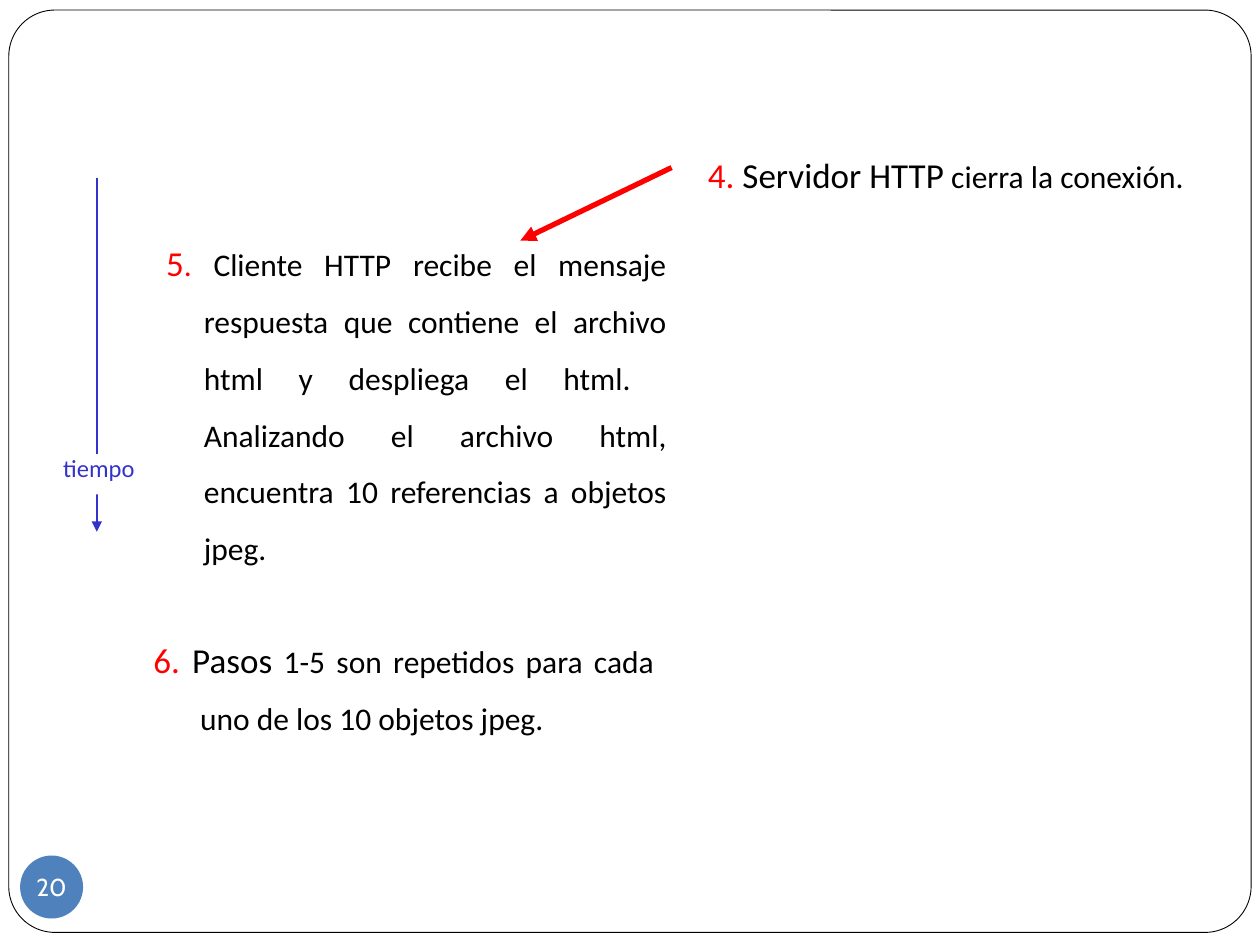
from pptx import Presentation
from pptx.dml.color import RGBColor
from pptx.enum.shapes import MSO_CONNECTOR, MSO_SHAPE
from pptx.enum.text import MSO_ANCHOR, PP_ALIGN
from pptx.oxml.ns import qn
from pptx.util import Inches, Pt
from lxml.etree import SubElement

COLUMNS, ROWS = 100, 75
WIDTH, HEIGHT = Inches(10), Inches(7.5)
RED, BLUE, BLACK, WHITE = "FF0000", "3333CC", "000000", "FFFFFF"


def color(value):
    return RGBColor.from_string(value)


def across(columns):
    return round(WIDTH * columns / COLUMNS)


def down(rows):
    return round(HEIGHT * rows / ROWS)


def place(box):
    left, top, width, height = box
    return across(left), down(top), across(width), down(height)


def add_span(para, text, size, tint, font="Calibri"):
    span = para.add_run()
    span.text = text
    span.font.size = Pt(size)
    span.font.name = font
    span.font.color.rgb = color(tint)


def add_block(page, kind, box, fill, outline=None):
    block = page.shapes.add_shape(kind, *place(box))
    block.shadow.inherit = False
    block.fill.solid()
    block.fill.fore_color.rgb = color(fill)
    if outline:
        block.line.color.rgb = color(outline)
        block.line.width = Pt(0.5)
    else:
        block.line.fill.background()
    return block


def add_arrow(page, start, end, tint, weight):
    arrow = page.shapes.add_connector(
        MSO_CONNECTOR.STRAIGHT,
        across(start[0]), down(start[1]), across(end[0]), down(end[1]))
    arrow.line.color.rgb = color(tint)
    arrow.line.width = Pt(weight)
    SubElement(arrow.line._get_or_add_ln(), qn("a:tailEnd"), type="triangle")
    SubElement(arrow._element.spPr, qn("a:effectLst"))


def add_frame(page, box):
    frame = add_block(page, MSO_SHAPE.ROUNDED_RECTANGLE, box, WHITE, BLACK)
    frame.adjustments[0] = 0.05


def add_step(page, box, indent, spans):
    frame = page.shapes.add_textbox(*place(box)).text_frame
    frame.word_wrap = True
    para = frame.paragraphs[0]
    para.alignment = PP_ALIGN.JUSTIFY
    para.line_spacing = 1.5
    para.space_before = Pt(4.5)
    properties = para._p.get_or_add_pPr()
    properties.set("marL", str(across(indent)))
    properties.set("indent", str(-across(indent)))
    for text, size, tint in spans:
        add_span(para, text, size, tint)


def add_timeline(page, box):
    left, top, width, height = box
    axis = left + width * 0.48
    label_top = top + height * 0.77
    label_height = 3.2
    add_arrow(page, (axis, top), (axis, top + height), BLUE, 1.5)
    add_block(page, MSO_SHAPE.RECTANGLE,
              (axis - 2.6, label_top + 0.3, 3.8, label_height), WHITE)
    label = page.shapes.add_textbox(*place((left, label_top, width, label_height)))
    label.text_frame.word_wrap = False
    para = label.text_frame.paragraphs[0]
    para.alignment = PP_ALIGN.CENTER
    para.line_spacing = 0.9
    add_span(para, "tiempo", 14, BLUE)


def add_page_number(page, box):
    frame = add_block(page, MSO_SHAPE.OVAL, box, "4F81BD").text_frame
    frame.margin_left = frame.margin_right = 0
    frame.margin_top = frame.margin_bottom = 0
    frame.vertical_anchor = MSO_ANCHOR.MIDDLE
    frame.word_wrap = False
    para = frame.paragraphs[0]
    para.alignment = PP_ALIGN.CENTER
    add_span(para, "20", 14, WHITE, "Cabin")


def main():
    deck = Presentation()
    deck.slide_width, deck.slide_height = WIDTH, HEIGHT
    page = deck.slides.add_slide(deck.slide_layouts[6])
    add_frame(page, (0.7, 0.8, 98.6, 73.2))
    add_step(page, (12.2, 17, 41.7, 18.2), 3, [
        ("5", 20, RED),
        (".", 18, RED),
        (" Cliente HTTP recibe el mensaje respuesta que contiene el archivo html "
         "y despliega el html.  Analizando el archivo html, encuentra 10 "
         "referencias a objetos jpeg.", 18, BLACK)])
    add_step(page, (11.2, 48.5, 41.7, 10.1), 3.7, [
        ("6.", 20, RED),
        (" Pasos", 20, BLACK),
        (" 1-5 son repetidos para cada uno de los 10 objetos jpeg.", 18, BLACK)])
    add_step(page, (55.2, 10, 41.7, 10.1), 3.7, [
        ("4.", 20, RED),
        (" Servidor HTTP", 20, BLACK),
        (" cierra la conexión.", 18, BLACK)])
    add_timeline(page, (3.8, 14.1, 8.1, 28.1))
    add_arrow(page, (53.3, 13.3), (41.3, 19.1), RED, 3)
    add_page_number(page, (1.6, 67.9, 5, 5))
    deck.save("out.pptx")


if __name__ == "__main__":
    main()
